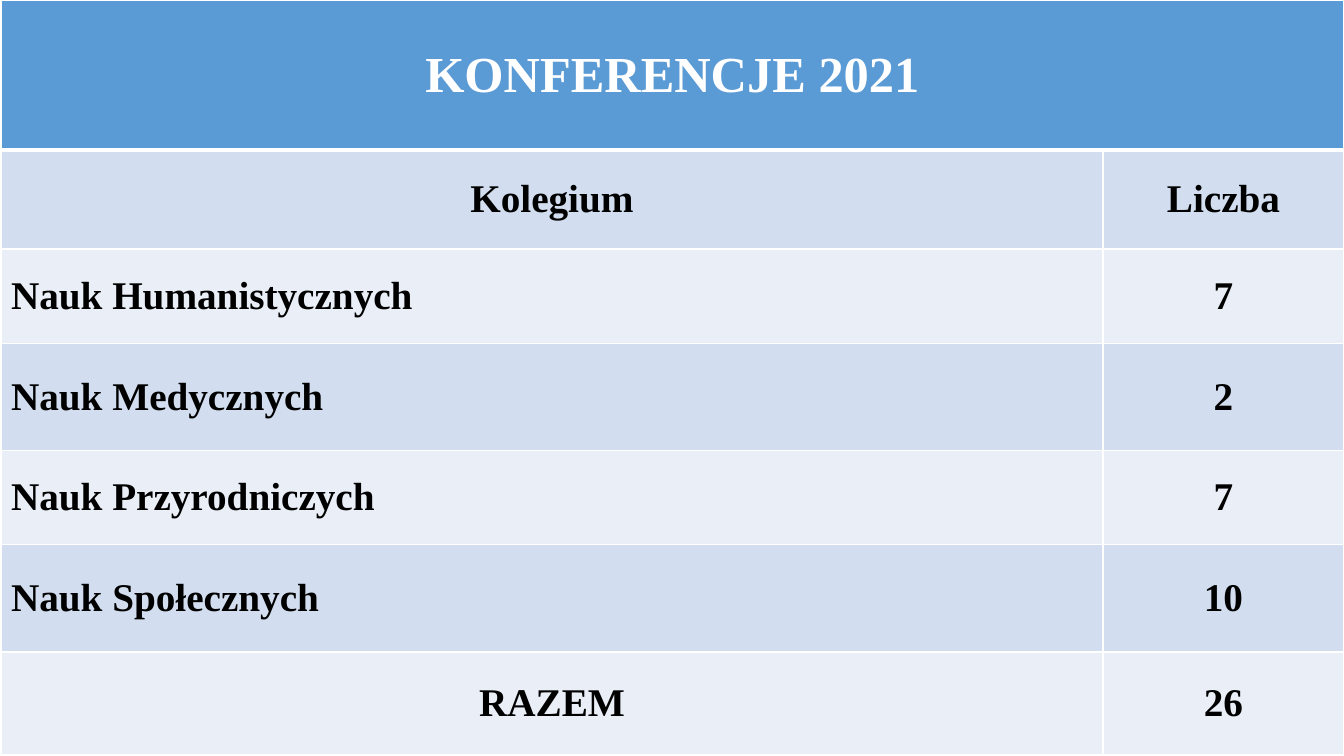
"""Build a slide with a table of conferences held by each college in 2021."""
from dataclasses import dataclass

from lxml import etree
from pptx import Presentation
from pptx.dml.color import RGBColor
from pptx.enum.text import MSO_ANCHOR, PP_ALIGN
from pptx.oxml.ns import qn
from pptx.table import _Cell
from pptx.util import Inches, Pt

CENTER, LEFT = PP_ALIGN.CENTER, PP_ALIGN.LEFT
MIDDLE = MSO_ANCHOR.MIDDLE


@dataclass(frozen=True)
class Theme:
    """Colours, font and sizes of the slide."""
    font: str = "Times New Roman"
    title_size: int = 36
    body_size: int = 28
    title_text: str = "FFFFFF"
    body_text: str = "000000"
    title_fill: str = "5B9BD5"
    bands: tuple[str, str] = ("D2DEEF", "EAEFF7")
    border: str = "FFFFFF"
    thin: int = 1
    thick: int = 3


@dataclass(frozen=True)
class TableRow:
    """One row of the table, with the alignment of its first cell."""
    texts: tuple[str, str]
    height: float
    alignment: PP_ALIGN = LEFT


THEME = Theme()
COLUMN_WIDTHS = (10.93, 2.39)
ROWS = (
    TableRow(("KONFERENCJE 2021", ""), 1.49, CENTER),
    TableRow(("Kolegium", "Liczba"), 0.98, CENTER),
    TableRow(("Nauk Humanistycznych", "7"), 0.94),
    TableRow(("Nauk Medycznych", "2"), 1.06),
    TableRow(("Nauk Przyrodniczych", "7"), 0.93),
    TableRow(("Nauk Społecznych", "10"), 1.07),
    TableRow(("RAZEM", "26"), 1.02, CENTER),
)


def set_borders(cell: _Cell, widths: dict[str, int]) -> None:
    """Draw solid borders of the given point widths around a cell."""
    properties = cell._tc.get_or_add_tcPr()
    for position, (side, width) in enumerate(widths.items()):
        line = etree.Element(qn(f"a:ln{side}"), w=str(Pt(width)))
        fill = etree.SubElement(line, qn("a:solidFill"))
        etree.SubElement(fill, qn("a:srgbClr"), val=THEME.border)
        properties.insert(position, line)


def write_text(cell: _Cell, text: str, alignment: PP_ALIGN, is_title: bool) -> None:
    """Write bold, vertically centred text into a cell."""
    cell.vertical_anchor = MIDDLE
    paragraph = cell.text_frame.paragraphs[0]
    paragraph.alignment = alignment
    run = paragraph.add_run()
    run.text = text
    font_format = {
        "name": THEME.font,
        "size": Pt(THEME.title_size if is_title else THEME.body_size),
        "bold": True,
    }
    for attribute, value in font_format.items():
        setattr(run.font, attribute, value)
    color = THEME.title_text if is_title else THEME.body_text
    run.font.color.rgb = RGBColor.from_string(color)


def draw_cell(cell: _Cell, row_index: int, text: str, alignment: PP_ALIGN) -> None:
    """Fill, border and label one cell according to its row."""
    is_title = row_index == 0
    color = THEME.title_fill if is_title else THEME.bands[(row_index - 1) % 2]
    cell.fill.solid()
    cell.fill.fore_color.rgb = RGBColor.from_string(color)
    set_borders(cell, {
        "L": THEME.thin,
        "R": THEME.thin,
        "T": THEME.thick if row_index == 1 else THEME.thin,
        "B": THEME.thick if is_title else THEME.thin,
    })
    if text:
        write_text(cell, text, alignment, is_title)


def main() -> None:
    """Create the presentation and save it."""
    presentation = Presentation()
    presentation.slide_width = Inches(13.33)
    presentation.slide_height = Inches(7.5)
    slide = presentation.slides.add_slide(presentation.slide_layouts[6])
    height = sum(row.height for row in ROWS)
    table = slide.shapes.add_table(
        len(ROWS), len(COLUMN_WIDTHS), Inches(0.01), Inches(0),
        Inches(sum(COLUMN_WIDTHS)), Inches(height),
    ).table
    for column, width in zip(table.columns, COLUMN_WIDTHS):
        column.width = Inches(width)
    for row_index, row in enumerate(ROWS):
        table.rows[row_index].height = Inches(row.height)
        for column_index, text in enumerate(row.texts):
            alignment = CENTER if column_index else row.alignment
            draw_cell(table.cell(row_index, column_index), row_index, text, alignment)
    table.cell(0, 0).merge(table.cell(0, 1))
    presentation.save("out.pptx")


if __name__ == "__main__":
    main()
